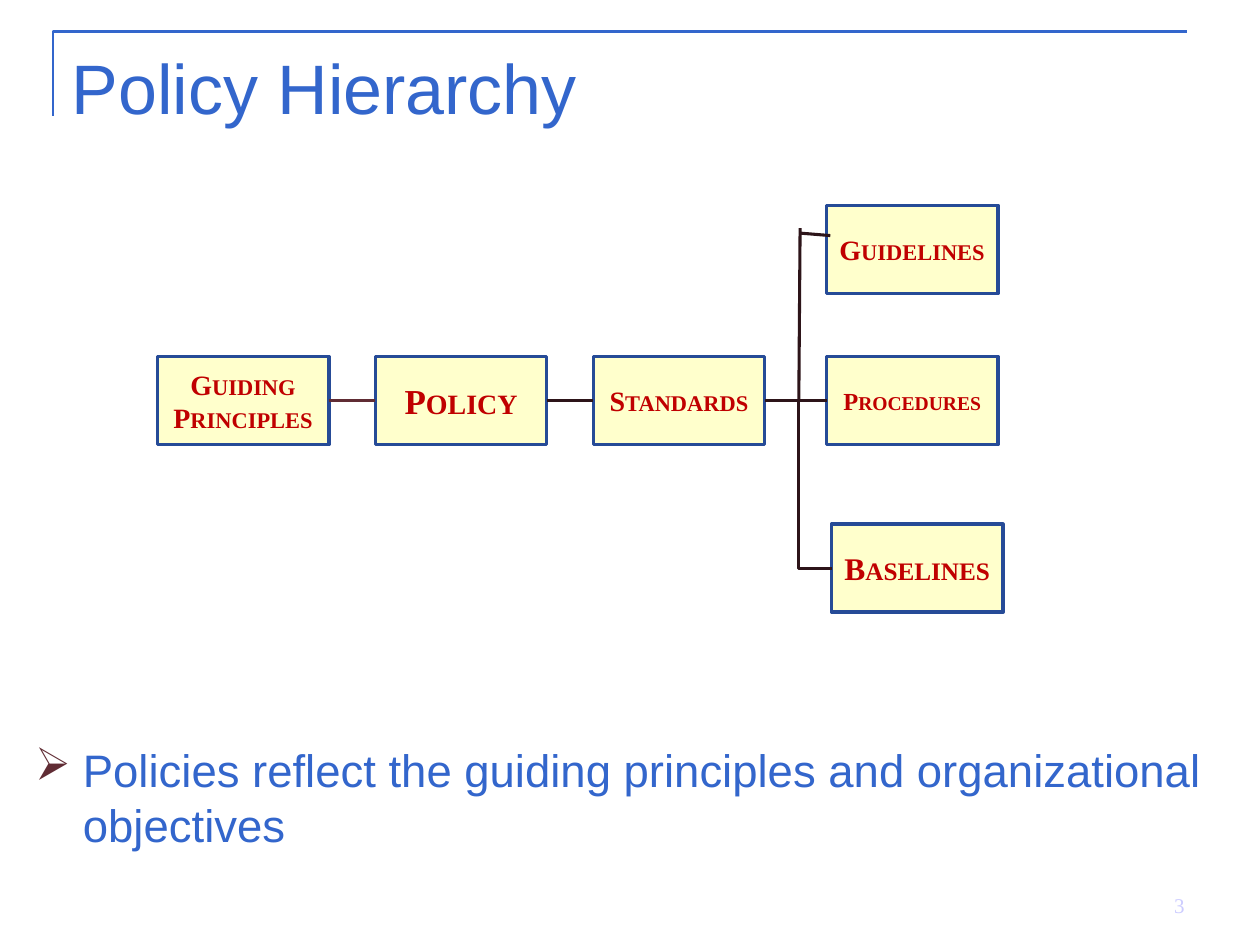
from pptx import Presentation
from pptx.dml.color import RGBColor
from pptx.enum import shapes, text
from pptx.oxml import parse_xml
from pptx.oxml.ns import nsdecls
from pptx.util import Inches, Pt

BLUE = RGBColor(0x33, 0x66, 0xCC)
NAVY = RGBColor(0x26, 0x4B, 0x97)
CREAM = RGBColor(0xFF, 0xFF, 0xCC)
RED = RGBColor(0xC0, 0x00, 0x00)
MAROON = RGBColor(0x60, 0x2C, 0x34)
DARK = RGBColor(0x2D, 0x14, 0x19)
LAVENDER = RGBColor(0xCC, 0xCC, 0xFF)

SANS, SERIF = "Arial", "Times New Roman"
BOX_SIZE = (1.36, 0.7)
ROW = 2.83
STRAIGHT = shapes.MSO_CONNECTOR.STRAIGHT
ELBOW = shapes.MSO_CONNECTOR.ELBOW

# name: (left, top, text size)
BOXES = {
    "Guiding Principles": (1.25, ROW, 16),
    "Policy": (2.98, ROW, 20),
    "Standards": (4.71, ROW, 16),
    "Baselines": (6.6, 4.16, 18),
    "Procedures": (6.56, ROW, 14),
    "Guidelines": (6.56, 1.63, 16),
}
LINKS = [
    ("Guiding Principles", "Policy", STRAIGHT, MAROON),
    ("Policy", "Standards", STRAIGHT, DARK),
    ("Standards", "Procedures", STRAIGHT, DARK),
    ("Standards", "Baselines", ELBOW, DARK),
]


def write(shape, words, *, size, color, font=SANS, bold=False, small_caps=False,
          align=text.PP_ALIGN.LEFT, anchor=text.MSO_ANCHOR.TOP, inset=(0.1, 0.05)):
    """Fill the shape with one formatted paragraph and return it."""
    frame = shape.text_frame
    frame.word_wrap = True
    frame.vertical_anchor = anchor
    frame.margin_left = frame.margin_right = Inches(inset[0])
    frame.margin_top = frame.margin_bottom = Inches(inset[1])
    para = frame.paragraphs[0]
    para.alignment = align
    span = para.add_run()
    span.text = words
    span.font.name, span.font.size, span.font.bold = font, Pt(size), bold
    span.font.color.rgb = color
    if small_caps:
        span.font._element.set("cap", "small")
    return para


def add_text(page, words, left, top, width, height, **style):
    area = page.shapes.add_textbox(*map(Inches, (left, top, width, height)))
    return write(area, words, **style)


def add_bullet(para, symbol, color, indent):
    properties = para._p.get_or_add_pPr()
    properties.set("marL", str(Inches(indent)))
    properties.set("indent", str(-Inches(indent)))
    properties.append(parse_xml(
        f'<a:buClr {nsdecls("a")}><a:srgbClr val="{color}"/></a:buClr>'))
    properties.append(parse_xml(f'<a:buChar {nsdecls("a")} char="{symbol}"/>'))


def add_box(page, words, left, top, size):
    box = page.shapes.add_shape(shapes.MSO_SHAPE.RECTANGLE,
                                *map(Inches, (left, top, *BOX_SIZE)))
    box.shadow.inherit = False
    box.fill.solid()
    box.fill.fore_color.rgb = CREAM
    box.line.color.rgb = NAVY
    box.line.width = Pt(2)
    write(box, words, size=size, color=RED, font=SERIF, bold=True, small_caps=True,
          align=text.PP_ALIGN.CENTER, anchor=text.MSO_ANCHOR.MIDDLE, inset=(0.05, 0.05))
    return box


def add_line(page, start=(0, 0), end=(0, 0), kind=STRAIGHT, color=DARK):
    line = page.shapes.add_connector(kind, *map(Inches, (*start, *end)))
    line.line.color.rgb = color
    line.line.width = Pt(1.75)
    line._element.spPr.append(parse_xml(f'<a:effectLst {nsdecls("a")}/>'))
    return line


def link(page, source, target, kind, color):
    """Join the right side of source to the left side of target."""
    line = add_line(page, kind=kind, color=color)
    line.begin_connect(source, 3)
    line.end_connect(target, 1)


def add_title_rule(page):
    builder = page.shapes.build_freeform(Inches(0.42), Inches(0.92))
    builder.add_line_segments([(Inches(0.42), Inches(0.25)),
                               (Inches(9.42), Inches(0.25))], close=False)
    rule = builder.convert_to_shape()
    rule.shadow.inherit = False
    rule.fill.background()
    rule.line.color.rgb = BLUE
    rule.line.width = Pt(1.5)


def main():
    deck = Presentation()
    deck.slide_width, deck.slide_height = Inches(10), Inches(7.5)
    page = deck.slides.add_slide(deck.slide_layouts[6])

    add_title_rule(page)
    add_text(page, "Policy Hierarchy", 0.47, 0.25, 9, 1.25,
             size=40, color=BLUE, inset=(0.1, 0.1))
    add_text(page, "3", 7.17, 6.83, 2.33, 0.5, size=12, color=LAVENDER, font=SERIF,
             align=text.PP_ALIGN.RIGHT, anchor=text.MSO_ANCHOR.BOTTOM)

    boxes = {name: add_box(page, name, *place) for name, place in BOXES.items()}
    for source, target, kind, color in LINKS:
        link(page, boxes[source], boxes[target], kind, color)
    add_line(page, (6.34, 3.18), (6.35, 1.81))
    add_line(page, (6.35, 1.85), (6.59, 1.87))

    para = add_text(
        page, "Policies reflect the guiding principles and organizational objectives",
        0.18, 5.84, 9.57, 1.21, size=26, color=BLUE)
    add_bullet(para, "➢", MAROON, 0.38)

    deck.save("out.pptx")


if __name__ == "__main__":
    main()
